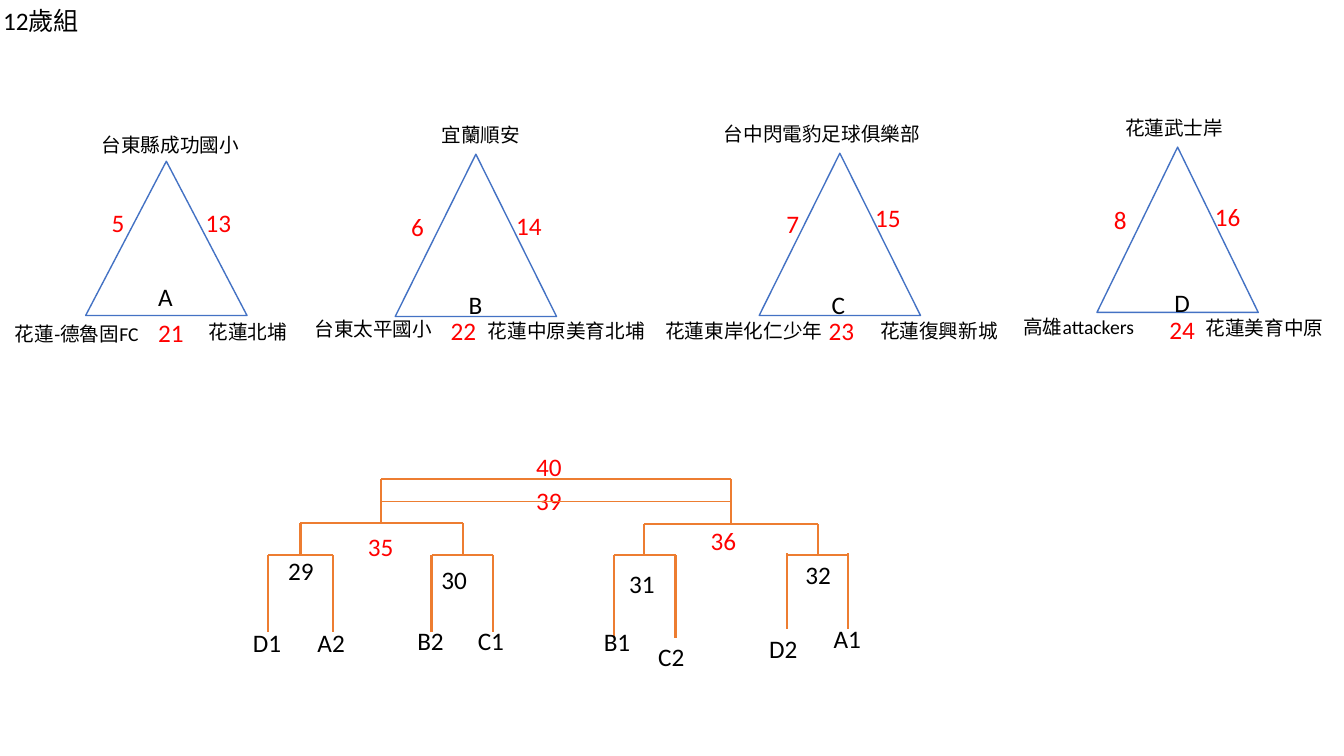
from pptx import Presentation
from pptx import util as u
from pptx.dml import color
from pptx.enum import shapes, text
from pptx.oxml import xmlchemy

BLACK, RED, BLUE, ORANGE, WHITE = "000000", "FF0000", "4472C4", "ED7D31", "FFFFFF"
TRIANGLE_WIDTH = 1.6

POOLS = [
    (0.85, 1.6, 1.53, [
        ("台東縣成功國小", 0.06, -0.33), ("花蓮-德魯固FC", -0.8, 1.54), ("花蓮北埔", 1.12, 1.52)],
     [("5", 0.16, 0.41), ("13", 1.09, 0.41), ("21", 0.62, 1.5)], ("A", 0.62, 1.14)),
    (3.92, 1.53, 1.61, [
        ("宜蘭順安", 0.36, -0.36), ("台東太平國小", -0.9, 1.56), ("花蓮中原美育北埔", 0.82, 1.58)],
     [("6", 0.06, 0.52), ("14", 1.1, 0.51), ("22", 0.45, 1.55)], ("B", 0.63, 1.29)),
    (7.53, 1.52, 1.61, [
        ("台中閃電豹足球俱樂部", -0.45, -0.36), ("花蓮東岸化仁少年", -1.03, 1.59), ("花蓮復興新城", 1.1, 1.59)],
     [("7", 0.17, 0.5), ("15", 1.05, 0.44), ("23", 0.59, 1.56)], ("C", 0.62, 1.3)),
    (10.88, 1.46, 1.64, [
        ("花蓮武士岸", 0.18, -0.36), ("高雄attackers", -0.83, 1.61), ("花蓮美育中原", 0.98, 1.62)],
     [("8", 0.07, 0.52), ("16", 1.07, 0.49), ("24", 0.62, 1.61)], ("D", 0.67, 1.34)),
]

FIRST_ROUND = [
    (2.66, 5.51, 0.64, 0.76, 0, [("29", 0.1, -0.05), ("D1", -0.25, 0.66), ("A2", 0.39, 0.66)]),
    (4.28, 5.51, 0.61, 0.76, 0, [("30", 0, 0.04), ("B2", -0.24, 0.64), ("C1", 0.36, 0.64)]),
    (6.09, 5.51, 0.61, 0.82, 0, [("31", 0.05, 0.08), ("B1", -0.2, 0.65), ("C2", 0.34, 0.8)]),
    (7.81, 5.51, 0.6, 0.73, 0.02, [("32", 0.08, -0.01), ("D2", -0.28, 0.72), ("A1", 0.36, 0.62)]),
]
LATER_ROUNDS = [
    (2.98, 5.19, 1.61, 0.32, 0, [("35", 0.57, 0.03)]),
    (6.39, 5.2, 1.72, 0.31, 0, [("36", 0.56, -0.04)]),
    (3.78, 4.75, 3.47, 0.44, 0, [("40", 1.44, -0.32), ("39", 1.44, 0.02)]),
]


def rgb(value):
    return color.RGBColor.from_string(value)


def write(frame, words, size, ink):
    frame.text = words
    frame.word_wrap = True
    frame.vertical_anchor = text.MSO_ANCHOR.TOP
    para = frame.paragraphs[0]
    para.alignment = text.PP_ALIGN.LEFT
    for span in para.runs:
        span.font.name = "Calibri"
        span.font.size = u.Pt(size)
        span.font.color.rgb = rgb(ink)


def add_label(page, words, left, top, size=18, ink=BLACK):
    ems = sum(0.7 if letter.isascii() else 1.03 for letter in words)
    width = 0.26 + ems * size / 72
    height = 0.1 + size / 60
    box = page.shapes.add_textbox(u.Inches(left), u.Inches(top), u.Inches(width), u.Inches(height))
    write(box.text_frame, words, size, ink)


def add_line(page, start, end, weight=1.5):
    ends = [u.Inches(value) for value in (*start, *end)]
    line = page.shapes.add_connector(shapes.MSO_CONNECTOR.STRAIGHT, *ends)
    line.line.color.rgb = rgb(ORANGE)
    line.line.width = u.Pt(weight)
    line._element.spPr.append(xmlchemy.OxmlElement("a:effectLst"))


def add_title(page, words, left, top, width, height):
    title = page.shapes.title
    title.left, title.top = u.Inches(left), u.Inches(top)
    title.width, title.height = u.Inches(width), u.Inches(height)
    write(title.text_frame, words, 18, BLACK)


def add_pool(page, left, top, height, teams, matches, name):
    triangle = page.shapes.add_shape(
        shapes.MSO_SHAPE.ISOSCELES_TRIANGLE,
        u.Inches(left), u.Inches(top), u.Inches(TRIANGLE_WIDTH), u.Inches(height))
    triangle.shadow.inherit = False
    triangle.fill.solid()
    triangle.fill.fore_color.rgb = rgb(WHITE)
    triangle.line.color.rgb = rgb(BLUE)
    triangle.line.width = u.Pt(1)
    for labels, size, ink in (([name], 18, BLACK), (teams, 14, BLACK), (matches, 18, RED)):
        for words, across, down in labels:
            add_label(page, words, left + across, top + down, size, ink)


def add_bracket(page, left, top, width, drop, overshoot, labels, ink):
    right = left + width
    add_line(page, (left, top), (right, top))
    for leg in (left, right):
        add_line(page, (leg, top - overshoot), (leg, top + drop))
    for words, across, down in labels:
        add_label(page, words, left + across, top + down, ink=ink)


def add_knockout(page):
    for bracket in FIRST_ROUND:
        add_bracket(page, *bracket, BLACK)
    for bracket in LATER_ROUNDS:
        add_bracket(page, *bracket, RED)
    left, top, width, drop = LATER_ROUNDS[-1][:4]
    middle = top + drop / 2
    add_line(page, (left, middle), (left + width, middle), 0.5)


def main():
    deck = Presentation()
    deck.slide_width, deck.slide_height = u.Inches(13.33), u.Inches(7.5)
    page = deck.slides.add_slide(deck.slide_layouts[5])
    add_title(page, "12歲組", -0.07, 0, 6.74, 0.4)
    for pool in POOLS:
        add_pool(page, *pool)
    add_knockout(page)
    deck.save("out.pptx")


if __name__ == "__main__":
    main()
